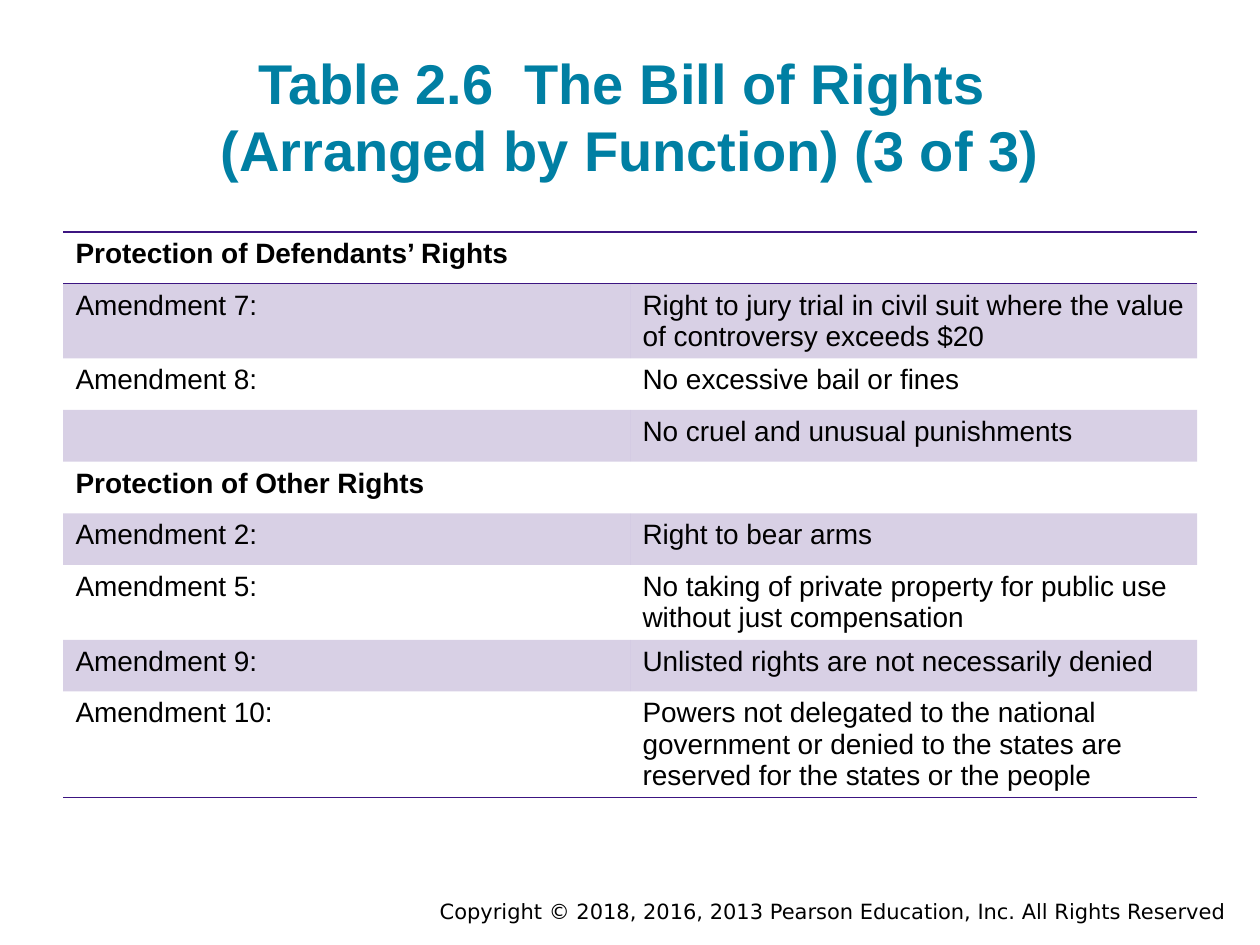
import pptx
import pptx.dml.color
import pptx.enum.text
import pptx.oxml
import pptx.oxml.ns
import pptx.util
from dataclasses import dataclass

Inches = pptx.util.Inches
Pt = pptx.util.Pt
PP_ALIGN = pptx.enum.text.PP_ALIGN


@dataclass(frozen=True)
class Theme:
    font: str = "Arial"
    footer_font: str = "DejaVu Sans"
    heading: str = "007FA3"
    text: str = "000000"
    accent: str = "3C1581"
    title_size: int = 32
    table_size: int = 16
    footer_size: int = 12


theme = Theme()
NO_STYLE = "{2D5ABB26-0587-4C30-8999-92F81FD0307C}"


def style(paragraph, font_name, size, color, bold=False):
    for run in paragraph.runs:
        run.font.name = font_name
        run.font.size = Pt(size)
        run.font.bold = bold
        run.font.color.rgb = pptx.dml.color.RGBColor.from_string(color)


def add_rules(cell, edges):
    """Draw 1 pt accent borders; edges are tag names in schema order."""
    properties = cell._tc.get_or_add_tcPr()
    for position, edge in enumerate(edges):
        properties.insert(position, pptx.oxml.parse_xml(
            f'<a:{edge} {pptx.oxml.ns.nsdecls("a")} w="{Pt(1)}"><a:solidFill>'
            f'<a:srgbClr val="{theme.accent}"/></a:solidFill></a:{edge}>'))


presentation = pptx.Presentation()
presentation.slide_width = Inches(10)
presentation.slide_height = Inches(7.5)
slide = presentation.slides.add_slide(presentation.slide_layouts[5])

title = slide.shapes.title
title.left, title.top = Inches(0.5), Inches(0.24)
title.width, title.height = Inches(9), Inches(1.31)
heading = title.text_frame
heading.text = "Table 2.6  The Bill of Rights \v(Arranged by Function) (3 of 3)"
heading.word_wrap = True
heading.auto_size = pptx.enum.text.MSO_AUTO_SIZE.NONE
heading.vertical_anchor = pptx.enum.text.MSO_ANCHOR.BOTTOM
heading.margin_left = heading.margin_right = Inches(0.1)
heading.margin_top = heading.margin_bottom = Inches(0.1)
heading.paragraphs[0].alignment = PP_ALIGN.CENTER
style(heading.paragraphs[0], theme.font, theme.title_size, theme.heading, bold=True)

rights = [
    ("Protection of Defendants’ Rights", ""),
    ("Amendment 7:", "Right to jury trial in civil suit where the value of controversy exceeds $20"),
    ("Amendment 8:", "No excessive bail or fines"),
    ("", "No cruel and unusual punishments"),
    ("Protection of Other Rights", ""),
    ("Amendment 2:", "Right to bear arms"),
    ("Amendment 5:", "No taking of private property for public use without just compensation"),
    ("Amendment 9:", "Unlisted rights are not necessarily denied"),
    ("Amendment 10:", "Powers not delegated to the national government or denied to the "
                      "states are reserved for the states or the people"),
]
row_height = Inches(0.41)
rights_table = slide.shapes.add_table(
    len(rights), 2, Inches(0.5), Inches(1.84), Inches(9), row_height * len(rights)).table
rights_table.first_row = False
rights_table.horz_banding = False
rights_table._tbl.tblPr.find(pptx.oxml.ns.qn("a:tableStyleId")).text = NO_STYLE

rules = {0: ["lnT", "lnB"], len(rights) - 1: ["lnB"]}
for row, entries in enumerate(rights):
    rights_table.rows[row].height = row_height
    is_group_heading = not entries[1]
    for column, entry in enumerate(entries):
        cell = rights_table.cell(row, column)
        cell.text_frame.text = entry
        style(cell.text_frame.paragraphs[0], theme.font, theme.table_size, theme.text,
              bold=is_group_heading)
        if row % 2:
            cell.fill.solid()
            cell.fill.fore_color.rgb = pptx.dml.color.RGBColor.from_string(theme.accent)
            tint = cell._tc.tcPr.find(".//" + pptx.oxml.ns.qn("a:srgbClr"))
            tint.append(pptx.oxml.parse_xml(
                f'<a:alpha {pptx.oxml.ns.nsdecls("a")} val="20000"/>'))
        else:
            cell.fill.background()
        add_rules(cell, rules.get(row, []))

copyright_line = slide.shapes.add_textbox(
    Inches(2), Inches(7.08), Inches(7.83), Inches(0.3)).text_frame
copyright_line.word_wrap = True
copyright_line.text = "Copyright © 2018, 2016, 2013 Pearson Education, Inc. All Rights Reserved"
copyright_line.paragraphs[0].alignment = PP_ALIGN.RIGHT
style(copyright_line.paragraphs[0], theme.footer_font, theme.footer_size, theme.text)

presentation.save("out.pptx")
